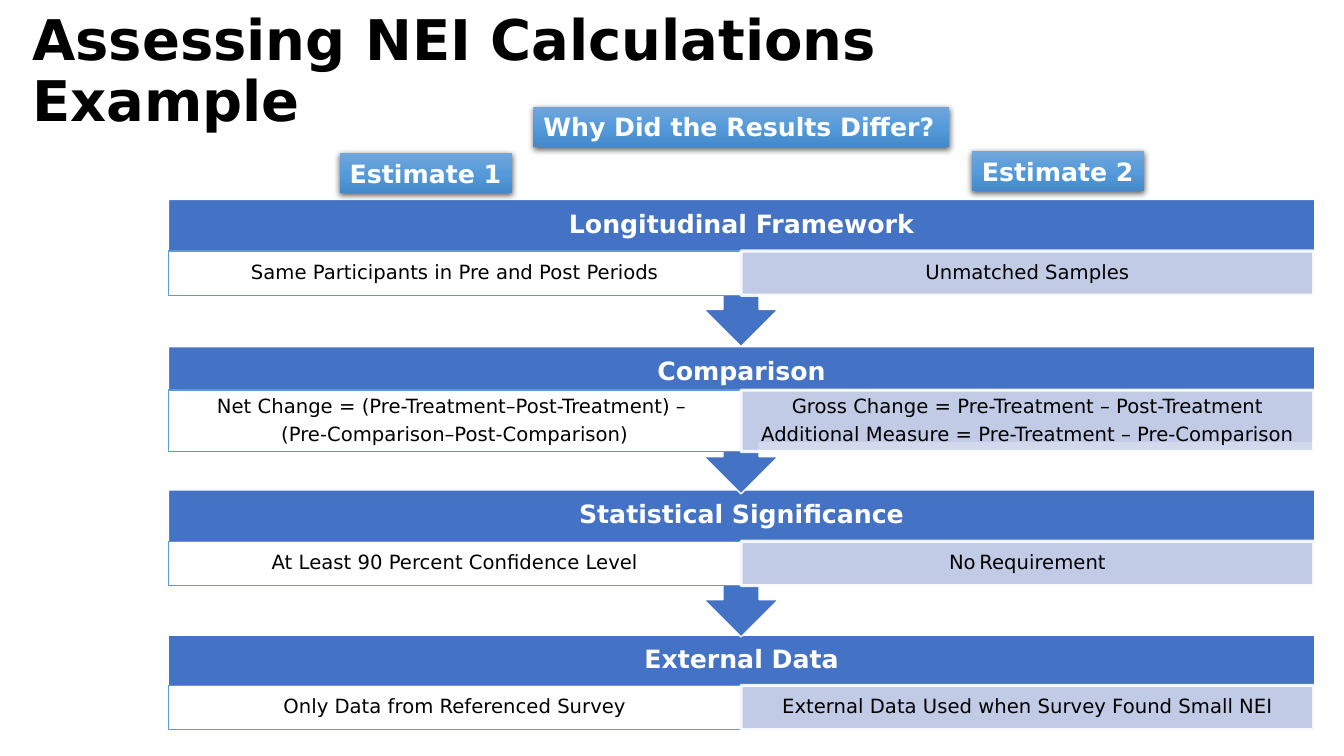
import copy
from dataclasses import dataclass

import lxml.etree
import pptx
import pptx.dml.color
import pptx.enum.shapes
import pptx.enum.text
import pptx.oxml
import pptx.oxml.ns
import pptx.util
from pptx.util import Inches

ANCHOR = pptx.enum.text.MSO_ANCHOR
ALIGN = pptx.enum.text.PP_ALIGN
AUTO_SIZE = pptx.enum.text.MSO_AUTO_SIZE


@dataclass(frozen=True)
class Theme:
    font: str = "DejaVu Sans"
    gap_font: str = "Calibri"
    title_size: int = 40
    heading_size: int = 18
    cell_size: int = 14
    gap_size: int = 11
    black: str = "000000"
    white: str = "FFFFFF"
    band: str = "4472C4"
    cell_line: str = "5B9BD5"
    shaded: str = "CFD5EA"
    label_stops: tuple = ((0, "71A6DB"), (0.5, "559BDB"), (1, "448ACA"))


THEME = Theme()
LEFT, CENTER, RIGHT = 1.67, 7.35, 13.04
BAR_HEIGHT, ARROW_HEIGHT = 0.95, 1.46
HEAD_HALF, STEM_HALF, HEAD_HEIGHT = 0.37, 0.18, 0.37

STEPS = [
    ("Longitudinal Framework", 1.98, 2.49, 0.44,
     ["Same Participants in Pre and Post Periods"], ["Unmatched Samples"]),
    ("Comparison", 3.44, 3.87, 0.61,
     ["Net Change = (Pre-Treatment–Post-Treatment) – ",
      "(Pre-Comparison–Post-Comparison)"],
     ["Gross Change = Pre-Treatment – Post-Treatment",
      "Additional Measure = Pre-Treatment – Pre-Comparison"]),
    ("Statistical Significance", 4.86, 5.37, 0.44,
     ["At Least 90 Percent Confidence Level"], [("No", " ", "Requirement")]),
    ("External Data", 6.3, 6.8, 0.44,
     ["Only Data from Referenced Survey"],
     ["External Data Used when Survey Found Small NEI"]),
]

LABELS = [
    ("Why Did the Results Differ?", 5.29, 1.06, 4.12),
    ("Estimate 2", 9.64, 1.5, 1.71),
    ("Estimate 1", 3.37, 1.52, 1.71),
]


def rgb(color):
    return pptx.dml.color.RGBColor.from_string(color)


def style_span(span, size, color, bold=False, font=THEME.font):
    span.font.name = font
    span.font.size = pptx.util.Pt(size)
    span.font.bold = bold
    span.font.color.rgb = rgb(color)


def set_insets(frame, left, top, right, bottom):
    frame.margin_left, frame.margin_top = Inches(left), Inches(top)
    frame.margin_right, frame.margin_bottom = Inches(right), Inches(bottom)


def write_lines(frame, lines, size, color, bold=False):
    frame.word_wrap = True
    for index, line in enumerate(lines):
        para = frame.add_paragraph() if index else frame.paragraphs[0]
        para.alignment = ALIGN.CENTER
        para.line_spacing = 0.9
        para.space_after = pptx.util.Pt(round(size * 0.35, 1))
        for text in (line,) if isinstance(line, str) else line:
            span = para.add_run()
            span.text = text
            if text == " ":
                style_span(span, THEME.gap_size, color, font=THEME.gap_font)
            else:
                style_span(span, size, color, bold)


def set_opacity(shape, percent):
    for color in shape._element.spPr.findall(".//" + pptx.oxml.ns.qn("a:srgbClr")):
        lxml.etree.SubElement(
            color, pptx.oxml.ns.qn("a:alpha"), val=str(percent * 1000))


def paint(shape, fill, line, width):
    shape.shadow.inherit = False
    shape.fill.solid()
    shape.fill.fore_color.rgb = rgb(fill)
    shape.line.color.rgb = rgb(line)
    shape.line.width = pptx.util.Pt(width)


def add_title(page, text):
    title = page.shapes.title
    title.left, title.top = Inches(0.22), Inches(0)
    title.width, title.height = Inches(11.5), Inches(1.45)
    frame = title.text_frame
    frame.text = text
    frame.auto_size = AUTO_SIZE.NONE
    frame.vertical_anchor = ANCHOR.MIDDLE
    para = frame.paragraphs[0]
    para.alignment = ALIGN.LEFT
    para.line_spacing = 0.9
    for span in para.runs:
        style_span(span, THEME.title_size, THEME.black, True)


def add_band(page, heading, top, has_arrow):
    bottom = top + BAR_HEIGHT
    points = [(RIGHT, top), (RIGHT, bottom)]
    if has_arrow:
        tip = top + ARROW_HEIGHT
        neck = tip - HEAD_HEIGHT
        points += [
            (CENTER + STEM_HALF, bottom), (CENTER + STEM_HALF, neck),
            (CENTER + HEAD_HALF, neck), (CENTER, tip),
            (CENTER - HEAD_HALF, neck), (CENTER - STEM_HALF, neck),
            (CENTER - STEM_HALF, bottom),
        ]
    points.append((LEFT, bottom))
    builder = page.shapes.build_freeform(Inches(LEFT), Inches(top))
    builder.add_line_segments([(Inches(x), Inches(y)) for x, y in points])
    band = builder.convert_to_shape()
    paint(band, THEME.band, THEME.white, 1)
    frame = band.text_frame
    set_insets(frame, 0.12, 0.12, 0.12, 1.07 if has_arrow else 0.56)
    frame.vertical_anchor = ANCHOR.TOP if heading == "Comparison" else ANCHOR.MIDDLE
    write_lines(frame, [heading], THEME.heading_size, THEME.white, True)


def add_cell(page, lines, left, top, height, shaded):
    cell = page.shapes.add_shape(
        pptx.enum.shapes.MSO_SHAPE.RECTANGLE,
        Inches(left), Inches(top), Inches(CENTER - LEFT), Inches(height))
    if shaded:
        paint(cell, THEME.shaded, THEME.white, 2.25)
        set_opacity(cell, 90)
    else:
        paint(cell, THEME.white, THEME.cell_line, 1)
    frame = cell.text_frame
    set_insets(frame, 0.09, 0.02, 0.09, 0.02)
    frame.vertical_anchor = ANCHOR.MIDDLE
    write_lines(frame, lines, THEME.cell_size, THEME.black)


def add_label_shadow(label):
    label.shadow.inherit = False
    effects = label._element.spPr.find(pptx.oxml.ns.qn("a:effectLst"))
    effects.append(pptx.oxml.parse_xml(
        f'<a:outerShdw {pptx.oxml.ns.nsdecls("a")} blurRad="57150" '
        'dist="19050" dir="5400000" algn="ctr" rotWithShape="0">'
        f'<a:srgbClr val="{THEME.black}"><a:alpha val="63000"/></a:srgbClr>'
        '</a:outerShdw>'))


def add_label(page, text, left, top, width):
    label = page.shapes.add_shape(
        pptx.enum.shapes.MSO_SHAPE.RECTANGLE,
        Inches(left), Inches(top), Inches(width), Inches(0.4))
    label.fill.gradient()
    label.fill.gradient_angle = 270
    stops = label._element.spPr.find(".//" + pptx.oxml.ns.qn("a:gsLst"))
    stops.append(copy.deepcopy(stops[0]))
    for stop, (position, color) in zip(label.fill.gradient_stops, THEME.label_stops):
        stop.position = position
        stop.color.rgb = rgb(color)
    label.line.fill.background()
    add_label_shadow(label)
    frame = label.text_frame
    frame.text = text
    frame.word_wrap = False
    frame.auto_size = AUTO_SIZE.SHAPE_TO_FIT_TEXT
    frame.vertical_anchor = ANCHOR.TOP
    frame.paragraphs[0].alignment = ALIGN.LEFT
    style_span(frame.paragraphs[0].runs[0], THEME.heading_size, THEME.white, True)


def main():
    deck = pptx.Presentation()
    deck.slide_width, deck.slide_height = Inches(13.33), Inches(7.5)
    page = deck.slides.add_slide(deck.slide_layouts[5])
    add_title(page, "Assessing NEI Calculations\vExample")
    for step in reversed(STEPS):
        heading, top, cell_top, height, first, second = step
        add_band(page, heading, top, step is not STEPS[-1])
        add_cell(page, first, LEFT, cell_top, height, False)
        add_cell(page, second, CENTER, cell_top, height, True)
    for label in LABELS:
        add_label(page, *label)
    deck.save("out.pptx")


if __name__ == "__main__":
    main()
